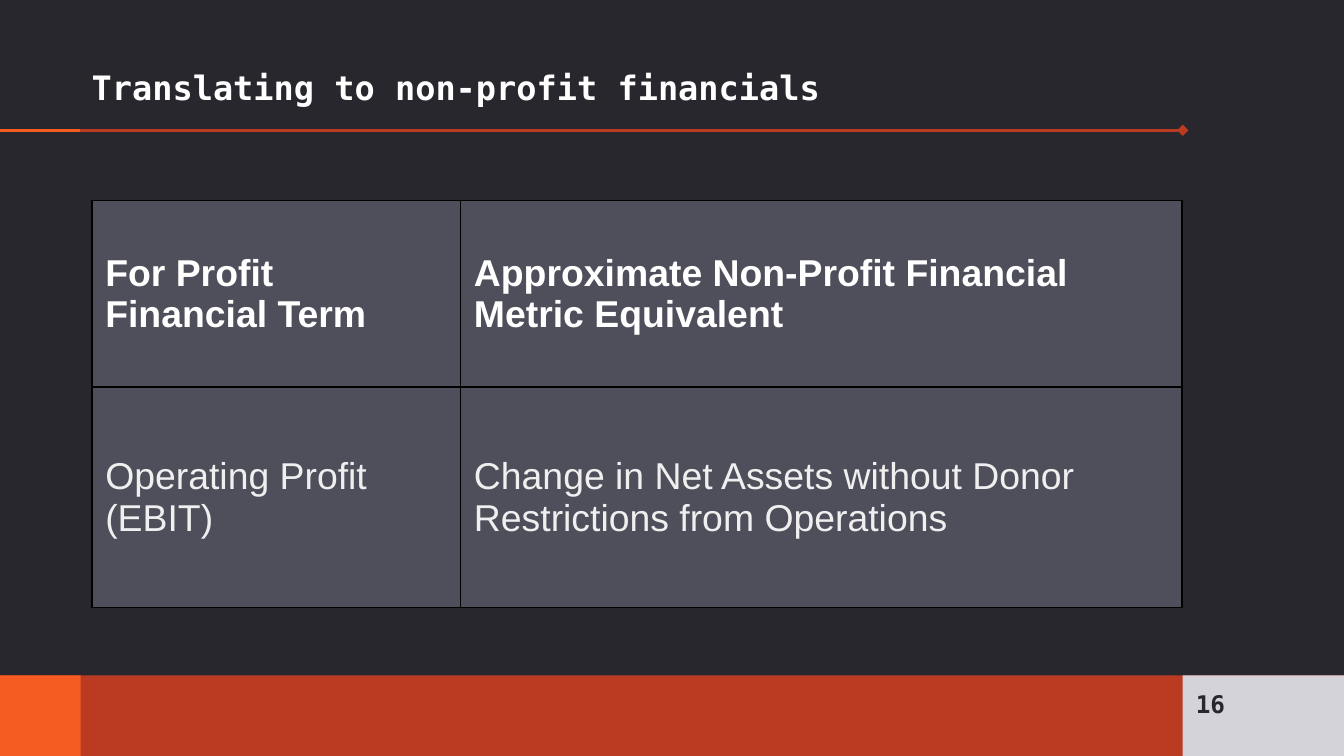
from dataclasses import dataclass

from lxml.etree import SubElement
from pptx import Presentation
from pptx.dml.color import RGBColor as Color
from pptx.enum.shapes import MSO_CONNECTOR as Connector, MSO_SHAPE as Shape
from pptx.enum.text import MSO_ANCHOR as Anchor, MSO_AUTO_SIZE as AutoSize, PP_ALIGN as Align
from pptx.oxml.ns import qn
from pptx.util import Pt


@dataclass(frozen=True)
class Theme:
    background: str = "27272D"
    red: str = "BA3B21"
    orange: str = "F55C21"
    pale: str = "D4D3D9"
    cell: str = "4F4F5C"
    border: str = "000000"
    heading: str = "FFFFFF"
    body: str = "EFEFEF"
    mono: str = "DejaVu Sans Mono"
    sans: str = "Arial"
    title_size: float = 18
    number_size: float = 13
    table_size: float = 20


THEME = Theme()
WIDTH, HEIGHT = 720, 405
FOOTER_HEIGHT = 43.2
FOOTER_TOP = HEIGHT - FOOTER_HEIGHT
RIGHT_EDGE = 633.6
RULE_TOP = 69.8
INSET = 7.2
TABLE_LEFT, TABLE_TOP = 49.2, 107.5
COLUMN_WIDTHS = (197.5, 386.5)
ROW_HEIGHTS = (100, 118)
ROWS = (
    ("For Profit  Financial Term", "Approximate Non-Profit Financial Metric Equivalent"),
    ("Operating Profit (EBIT)", "Change in Net Assets without Donor Restrictions from Operations"),
)


def paint(fill, color):
    fill.solid()
    fill.fore_color.rgb = Color.from_string(color)


def write(frame, text, font_name, size, color, bold):
    frame.text = text
    paragraph = frame.paragraphs[0]
    paragraph.alignment = Align.LEFT
    font = paragraph.font
    font.name, font.size, font.bold = font_name, Pt(size), bold
    font.color.rgb = Color.from_string(color)


def set_insets(frame):
    frame.margin_left = frame.margin_right = Pt(INSET)
    frame.margin_top = frame.margin_bottom = Pt(INSET)


def add_title(slide, text):
    title = slide.shapes.title
    title.left, title.top, title.width, title.height = Pt(41.9), Pt(10), Pt(466), Pt(54.8)
    frame = title.text_frame
    set_insets(frame)
    frame.auto_size = AutoSize.NONE
    frame.word_wrap = True
    frame.vertical_anchor = Anchor.BOTTOM
    write(frame, text, THEME.mono, THEME.title_size, THEME.heading, True)


def add_rule(slide, end, color, diamond=False):
    rule = slide.shapes.add_connector(
        Connector.STRAIGHT, Pt(-0.5), Pt(RULE_TOP), Pt(end), Pt(RULE_TOP))
    rule.line.color.rgb = Color.from_string(color)
    rule.line.width = Pt(1.5)
    if diamond:
        SubElement(rule.line._get_or_add_ln(), qn("a:tailEnd"), type="diamond")
    SubElement(rule._element.spPr, qn("a:effectLst"))


def add_footer_block(slide, left, right, color):
    block = slide.shapes.add_shape(
        Shape.RECTANGLE, Pt(left), Pt(FOOTER_TOP), Pt(right - left), Pt(FOOTER_HEIGHT))
    block.shadow.inherit = False
    paint(block.fill, color)
    block.line.fill.background()
    return block


def add_page_number(slide, number):
    frame = add_footer_block(slide, RIGHT_EDGE, WIDTH, THEME.pale).text_frame
    set_insets(frame)
    frame.vertical_anchor = Anchor.TOP
    write(frame, number, THEME.mono, THEME.number_size, THEME.background, True)


def add_borders(cell):
    properties = cell._tc.get_or_add_tcPr()
    for index, side in enumerate(("lnL", "lnR", "lnT", "lnB")):
        line = properties.makeelement(qn(f"a:{side}"), {"w": str(Pt(1))})
        fill = SubElement(line, qn("a:solidFill"))
        SubElement(fill, qn("a:srgbClr"), val=THEME.border)
        properties.insert(index, line)


def add_terms_table(slide):
    table = slide.shapes.add_table(
        len(ROWS), len(COLUMN_WIDTHS), Pt(TABLE_LEFT), Pt(TABLE_TOP),
        Pt(sum(COLUMN_WIDTHS)), Pt(sum(ROW_HEIGHTS))).table
    table.horz_banding = False
    for column, width in zip(table.columns, COLUMN_WIDTHS):
        column.width = Pt(width)
    for row, height, texts in zip(table.rows, ROW_HEIGHTS, ROWS):
        row.height = Pt(height)
        header = texts is ROWS[0]
        color = THEME.heading if header else THEME.body
        for cell, text in zip(row.cells, texts):
            cell.margin_left = cell.margin_right = Pt(INSET)
            cell.margin_top = cell.margin_bottom = Pt(5)
            cell.vertical_anchor = Anchor.MIDDLE
            paint(cell.fill, THEME.cell)
            add_borders(cell)
            write(cell.text_frame, text, THEME.sans, THEME.table_size, color, header)


def main():
    presentation = Presentation()
    presentation.slide_width, presentation.slide_height = Pt(WIDTH), Pt(HEIGHT)
    slide = presentation.slides.add_slide(presentation.slide_layouts.get_by_name("Title Only"))
    paint(slide.background.fill, THEME.background)
    add_rule(slide, RIGHT_EDGE, THEME.red, diamond=True)
    add_footer_block(slide, 0, WIDTH, THEME.red)
    add_footer_block(slide, 0, FOOTER_HEIGHT, THEME.orange)
    add_rule(slide, FOOTER_HEIGHT - 0.5, THEME.orange)
    add_title(slide, "Translating to non-profit financials")
    add_page_number(slide, "16")
    add_terms_table(slide)
    presentation.save("out.pptx")


if __name__ == "__main__":
    main()
